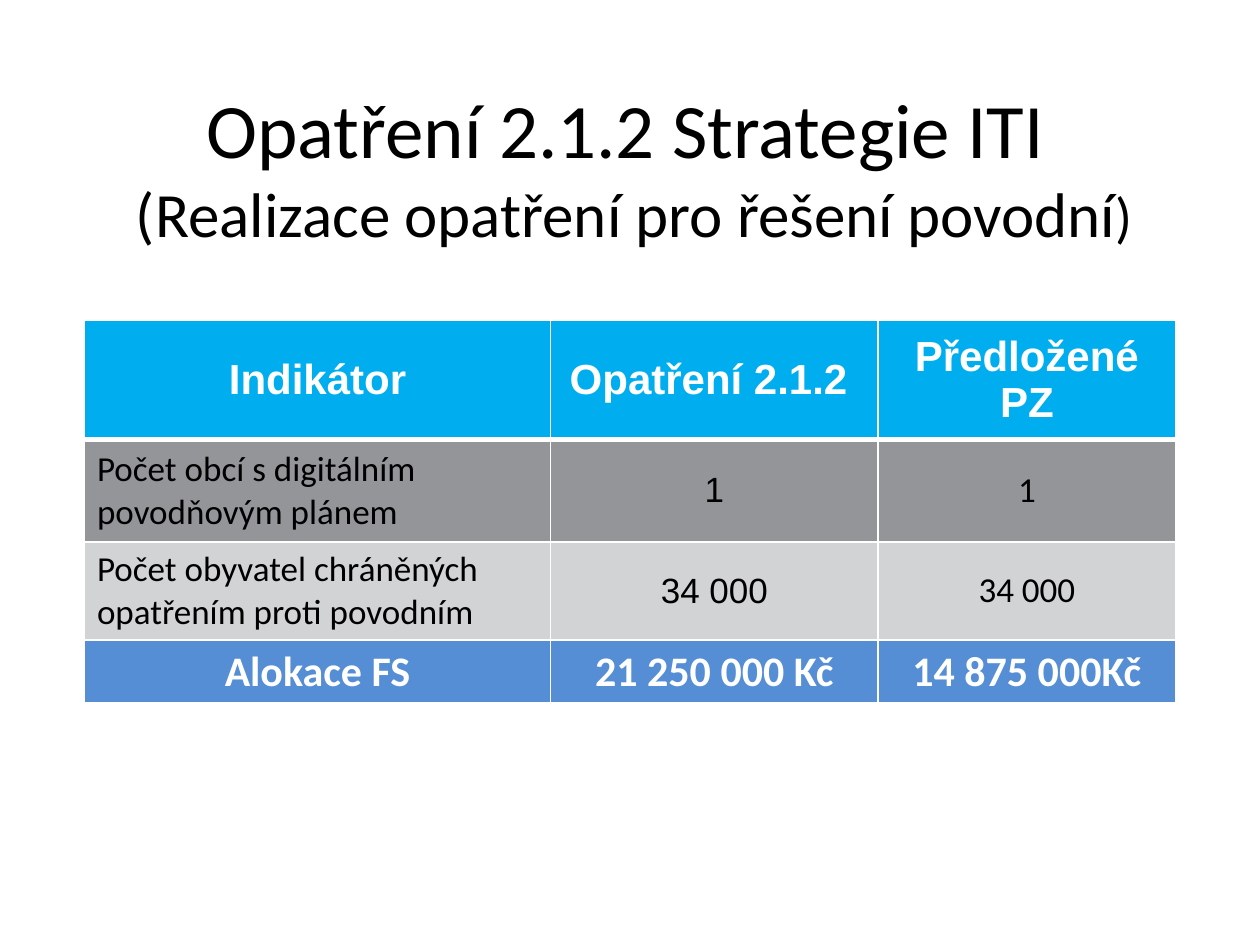
from lxml.etree import SubElement
from pptx import Presentation
from pptx.dml.color import RGBColor
from pptx.enum.text import MSO_ANCHOR, PP_ALIGN
from pptx.oxml.ns import qn
from pptx.util import Inches, Pt

COLORS = {
    "ink": "000000",
    "white": "FFFFFF",
    "header": "00AEEF",
    "dark": "939598",
    "light": "D1D3D4",
    "total": "558ED5",
}
HEADING = {"size": Pt(24), "name": "Arial", "bold": True}
BODY = {"size": Pt(20), "name": "Calibri", "bold": False}
BODY_ARIAL = {**BODY, "name": "Arial"}
TOTAL = {**HEADING, "name": "Calibri"}

COLUMN_WIDTHS = [3.7, 2.6, 2.36]
INDICATORS = [
    (0.95, "header", "white", [HEADING] * 3,
     ["Indikátor", "Opatření 2.1.2 ", "Předložené PZ"]),
    (0.81, "dark", "ink", [BODY, BODY_ARIAL, BODY],
     ["Počet obcí s digitálním povodňovým plánem", "1", "1"]),
    (0.78, "light", "ink", [BODY, BODY_ARIAL, BODY],
     ["Počet obyvatel chráněných opatřením proti povodním", "34 000", "34 000"]),
    (0.5, "total", "white", [TOTAL] * 3,
     ["Alokace FS", "21 250 000 Kč", "14 875 000Kč"]),
]


class SlideBuilder:
    """Hold the colours and the current slide, and add its elements."""

    def __init__(self, slide, colors):
        self.slide = slide
        self.colors = colors

    def color(self, key):
        return RGBColor.from_string(self.colors[key])

    def run(self, paragraph, text, style, color):
        run = paragraph.add_run()
        run.text = text
        for attribute, value in style.items():
            setattr(run.font, attribute, value)
        run.font.color.rgb = self.color(color)

    def title(self, bounds, lines):
        frame = self.slide.shapes.add_textbox(*map(Inches, bounds)).text_frame
        frame.word_wrap = True
        frame.vertical_anchor = MSO_ANCHOR.MIDDLE
        paragraph = frame.paragraphs[0]
        paragraph.alignment = PP_ALIGN.CENTER
        for index, pieces in enumerate(lines):
            if index:
                paragraph.add_line_break()
            for text, size in pieces:
                self.run(paragraph, text, {"size": Pt(size), "name": "Calibri"}, "ink")

    def borders(self, cell, bottom):
        properties = cell._tc.get_or_add_tcPr()
        widths = {"a:lnL": 1, "a:lnR": 1, "a:lnT": 1, "a:lnB": bottom}
        for position, (side, width) in enumerate(widths.items()):
            line = SubElement(properties, qn(side), w=str(Pt(width)))
            fill = SubElement(line, qn("a:solidFill"))
            SubElement(fill, qn("a:srgbClr"), val=self.colors["white"])
            properties.insert(position, line)

    def table(self, left, top, widths, rows):
        height = sum(row[0] for row in rows)
        table = self.slide.shapes.add_table(
            len(rows), len(widths),
            *map(Inches, (left, top, sum(widths), height))).table
        for column, width in zip(table.columns, widths):
            column.width = Inches(width)
        for index, (height, fill, ink, styles, texts) in enumerate(rows):
            table.rows[index].height = Inches(height)
            for column, (text, style) in enumerate(zip(texts, styles)):
                cell = table.cell(index, column)
                is_label = style is BODY and column == 0
                cell.vertical_anchor = MSO_ANCHOR.MIDDLE
                cell.fill.solid()
                cell.fill.fore_color.rgb = self.color(fill)
                if style is BODY and not is_label:
                    for side in ("left", "right", "top", "bottom"):
                        setattr(cell, f"margin_{side}", 0)
                paragraph = cell.text_frame.paragraphs[0]
                paragraph.alignment = PP_ALIGN.LEFT if is_label else PP_ALIGN.CENTER
                self.run(paragraph, text, style, ink)
                self.borders(cell, 3 if index == 0 else 1)
                if index == 1:
                    cell._tc.tcPr.find(qn("a:lnT")).set("w", str(Pt(3)))


def main():
    presentation = Presentation()
    presentation.slide_width = Inches(10)
    presentation.slide_height = Inches(7.5)
    slide = presentation.slides.add_slide(presentation.slide_layouts[6])
    builder = SlideBuilder(slide, COLORS)
    builder.title((0.35, 0.3, 9.37, 2.03), [
        [("Opatření 2.1.2 Strategie ITI ", 44)],
        [("(Realizace opatření pro řešení povodní", 36), (")", 32)],
    ])
    builder.table(0.67, 2.54, COLUMN_WIDTHS, INDICATORS)
    presentation.save("out.pptx")


if __name__ == "__main__":
    main()
